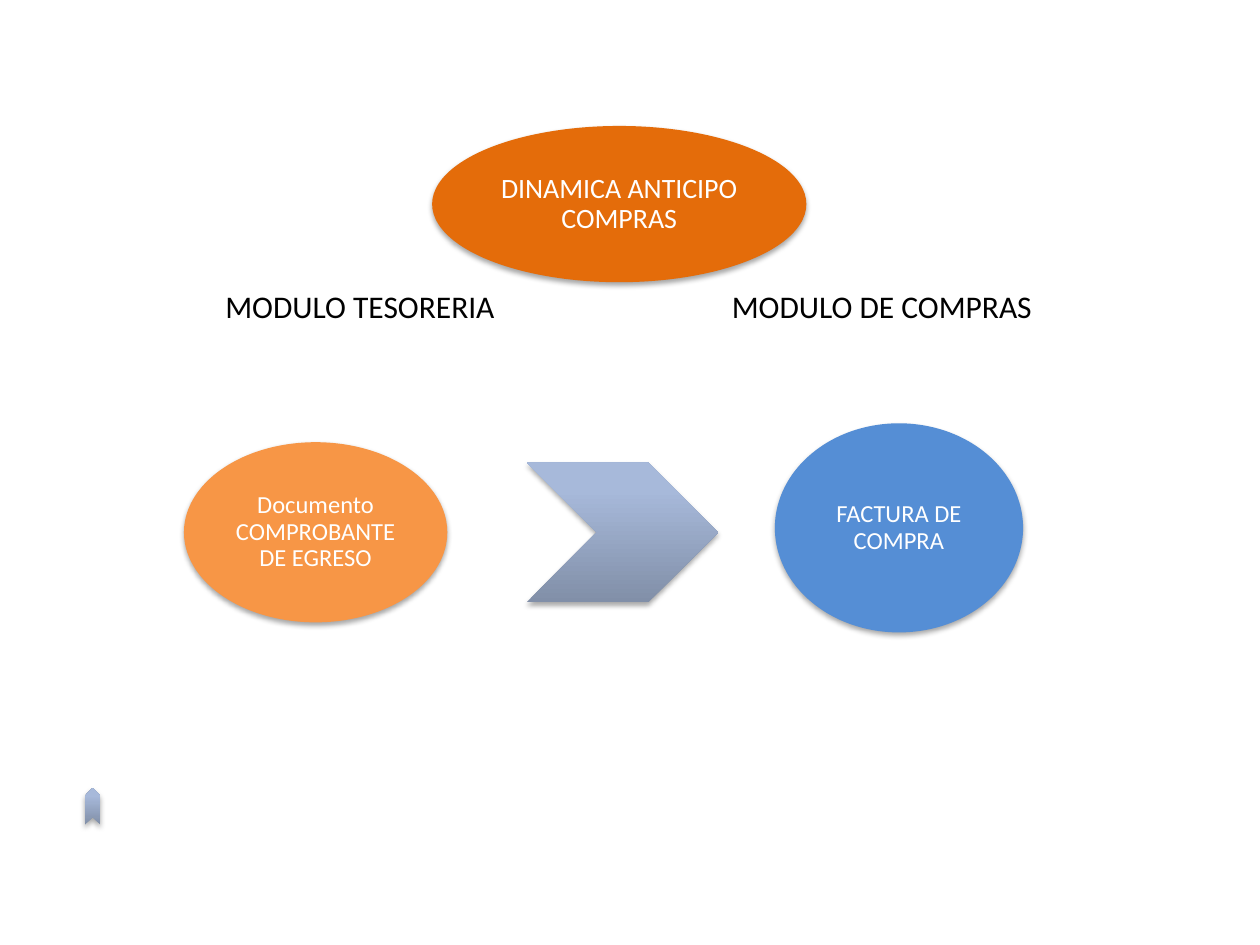
from lxml import etree
from pptx import Presentation
from pptx.dml.color import RGBColor
from pptx.enum.shapes import MSO_SHAPE as SHAPE
from pptx.enum.text import MSO_ANCHOR as ANCHOR, PP_ALIGN as ALIGN
from pptx.oxml.ns import qn
from pptx.util import Inches, Pt

FONT = "Calibri"
STEPS = [
    ("DINAMICA ANTICIPO COMPRAS", (3.43, 1, 2.97, 1.24), "E46C0A", 16),
    ("Documento COMPROBANTE DE EGRESO", (1.46, 3.51, 2.09, 1.43), "F79646", 14),
    ("FACTURA DE COMPRA", (6.15, 3.36, 1.97, 1.66), "558ED5", 14),
]
CHEVRONS = [
    ((4.18, 3.67, 1.52, 1.11), 0, 90),
    ((0.59, 6.34, 0.29, 0.12), 270, 0),
]
CHEVRON_COLORS = [(0, "818FA8"), (0.8, "A7B9DA")]
MODULES = [
    ("MODULO TESORERIA", (1.69, 2.23, 2.36, 0.4)),
    ("MODULO DE COMPRAS", (5.71, 2.23, 2.66, 0.4)),
]


def rgb(value):
    return RGBColor.from_string(value)


def write(frame, text, size, color, align=ALIGN.LEFT, spacing=1.0):
    paragraph = frame.paragraphs[0]
    paragraph.alignment = align
    paragraph.line_spacing = spacing
    run = paragraph.add_run()
    run.text = text
    run.font.name = FONT
    run.font.size = Pt(size)
    run.font.color.rgb = rgb(color)


def add_shadow(shape):
    shape.shadow.inherit = False
    effects = shape._element.spPr.find(qn("a:effectLst"))
    shadow = etree.SubElement(
        effects, qn("a:outerShdw"), blurRad=str(Pt(3.1)), dist=str(Pt(1.8)),
        dir="5400000", rotWithShape="0")
    black = etree.SubElement(shadow, qn("a:srgbClr"), val="000000")
    etree.SubElement(black, qn("a:alpha"), val="35000")


def add_figure(slide, kind, box):
    figure = slide.shapes.add_shape(kind, *map(Inches, box))
    figure.line.fill.background()
    add_shadow(figure)
    return figure


def add_step(slide, text, box, color, size):
    step = add_figure(slide, SHAPE.OVAL, box)
    step.fill.solid()
    step.fill.fore_color.rgb = rgb(color)
    frame = step.text_frame
    frame.word_wrap = True
    frame.vertical_anchor = ANCHOR.MIDDLE
    frame.margin_left = frame.margin_right = Inches(0.02)
    frame.margin_top = frame.margin_bottom = Inches(0.02)
    write(frame, text, size, "FFFFFF", align=ALIGN.CENTER, spacing=0.9)


def add_chevron(slide, box, rotation, angle):
    chevron = add_figure(slide, SHAPE.CHEVRON, box)
    chevron.rotation = rotation
    chevron.fill.gradient()
    chevron.fill.gradient_angle = angle
    for stop, (position, color) in zip(chevron.fill.gradient_stops, CHEVRON_COLORS):
        stop.position = position
        stop.color.rgb = rgb(color)


def add_module(slide, text, box):
    frame = slide.shapes.add_textbox(*map(Inches, box)).text_frame
    frame.word_wrap = False
    write(frame, text, 18, "000000")


def main():
    deck = Presentation()
    deck.slide_width, deck.slide_height = Inches(10), Inches(7.5)
    slide = deck.slides.add_slide(deck.slide_layouts[6])
    for step in STEPS:
        add_step(slide, *step)
    for chevron in CHEVRONS:
        add_chevron(slide, *chevron)
    for module in MODULES:
        add_module(slide, *module)
    deck.save("out.pptx")


if __name__ == "__main__":
    main()
